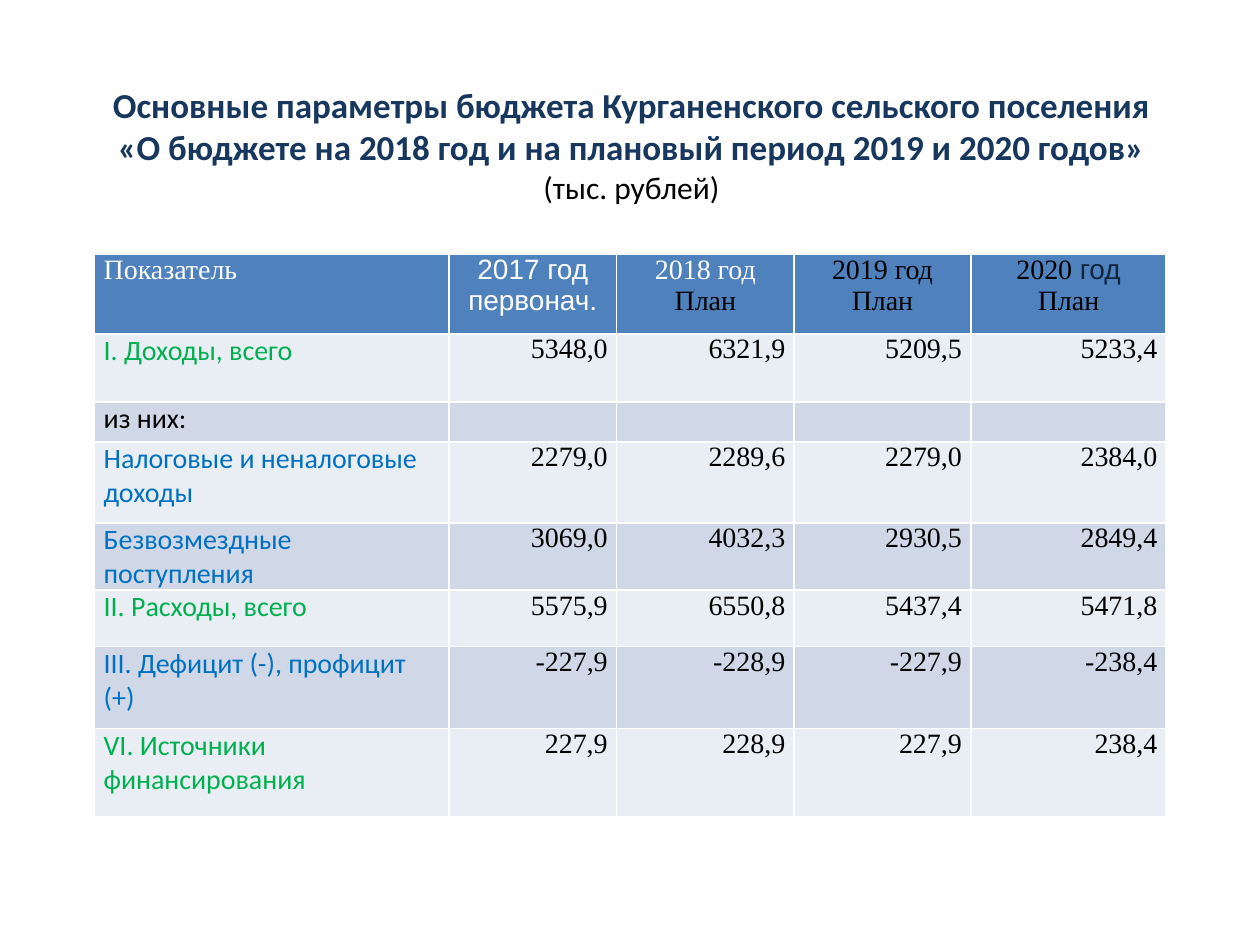
"""Build a slide with the main budget parameters of a rural settlement."""
from lxml import etree
from pptx import Presentation
from pptx import util as u
from pptx.dml.color import RGBColor
from pptx.enum import text
from pptx.oxml import ns

BLACK, WHITE, NAVY, INK = "000000", "FFFFFF", "17375E", "0F243E"
GREEN, BLUE = "00B050", "0070C0"
HEAD, LIGHT, DARK = "4F81BD", "E9EDF4", "D0D8E8"
SERIF, SANS, BODY = "Times New Roman", "Arial", "Calibri"
LEFT, CENTER, RIGHT = text.PP_ALIGN.LEFT, text.PP_ALIGN.CENTER, text.PP_ALIGN.RIGHT


def write(p, value, size=16, font=SERIF, color=BLACK, bold=False, align=CENTER):
    p.alignment = align
    r = p.add_run()
    r.text = value
    r.font.size = u.Pt(size)
    r.font.name = font
    r.font.bold = bold
    r.font.color.rgb = RGBColor.from_string(color)


def style(cell, fill):
    cell.margin_left = cell.margin_right = u.Cm(0.18)
    cell.margin_top = cell.margin_bottom = 0
    tc_pr = cell._tc.get_or_add_tcPr()
    for side in ("lnL", "lnR", "lnT", "lnB"):
        ln = etree.SubElement(tc_pr, ns.qn(f"a:{side}"), w=str(u.Pt(1)))
        solid = etree.SubElement(ln, ns.qn("a:solidFill"))
        etree.SubElement(solid, ns.qn("a:srgbClr"), val=WHITE)
    cell.fill.solid()
    cell.fill.fore_color.rgb = RGBColor.from_string(fill)


prs = Presentation()
prs.slide_width, prs.slide_height = u.Cm(25.4), u.Cm(19.05)
slide = prs.slides.add_slide(prs.slide_layouts[6])

sp = slide.shapes.add_textbox(u.Cm(1.3), u.Cm(1.12), u.Cm(22.86), u.Cm(3.6))
tf = sp.text_frame
tf.word_wrap = True
tf.vertical_anchor = text.MSO_ANCHOR.MIDDLE
p = tf.paragraphs[0]
for line in ("Основные параметры бюджета Курганенского сельского поселения",
             "«О бюджете на 2018 год и на плановый период 2019 и 2020 годов»"):
    write(p, line, size=20, font=BODY, color=NAVY, bold=True)
    p.add_line_break()
write(p, "(тыс. рублей)", size=18, font=BODY)

widths = [7.14, 3.38, 3.58, 3.56, 3.94]
heights = [1.6, 1.37, 0.81, 1.63, 1.17, 1.14, 1.65, 1.78]
rows = [
    ("I. Доходы, всего", GREEN, ["5348,0", "6321,9", "5209,5", "5233,4"]),
    ("из них:", BLACK, []),
    ("Налоговые и неналоговые доходы", BLUE, ["2279,0", "2289,6", "2279,0", "2384,0"]),
    ("Безвозмездные поступления", BLUE, ["3069,0", "4032,3", "2930,5", "2849,4"]),
    ("II. Расходы, всего", GREEN, ["5575,9", "6550,8", "5437,4", "5471,8"]),
    ("III. Дефицит (-), профицит (+)", BLUE, ["-227,9", "-228,9", "-227,9", "-238,4"]),
    ("VI. Источники финансирования", GREEN, ["227,9", "228,9", "227,9", "238,4"]),
]

table = slide.shapes.add_table(len(heights), len(widths), u.Cm(1.91), u.Cm(5.13),
                               u.Cm(sum(widths)), u.Cm(sum(heights))).table
for column, width in zip(table.columns, widths):
    column.width = u.Cm(width)
for i, (row, height) in enumerate(zip(table.rows, heights)):
    row.height = u.Cm(height)
    for cell in row.cells:
        style(cell, HEAD if i == 0 else LIGHT if i % 2 else DARK)

heads = [cell.text_frame for cell in table.rows[0].cells]
write(heads[0].paragraphs[0], "Показатель", color=WHITE, align=LEFT)
write(heads[1].paragraphs[0], "2017 год первонач.", font=SANS, color=WHITE)
write(heads[2].paragraphs[0], "2018 год", color=WHITE)
write(heads[3].paragraphs[0], "2019 год")
write(heads[4].paragraphs[0], "2020")
write(heads[4].paragraphs[0], " год", font=SANS, color=INK)
for tf in heads[2:]:
    write(tf.add_paragraph(), "План")

for i, (label, color, values) in enumerate(rows, 1):
    write(table.cell(i, 0).text_frame.paragraphs[0], label,
          font=BODY, color=color, align=LEFT)
    for j, value in enumerate(values, 1):
        write(table.cell(i, j).text_frame.paragraphs[0], value, align=RIGHT)

prs.save("out.pptx")
